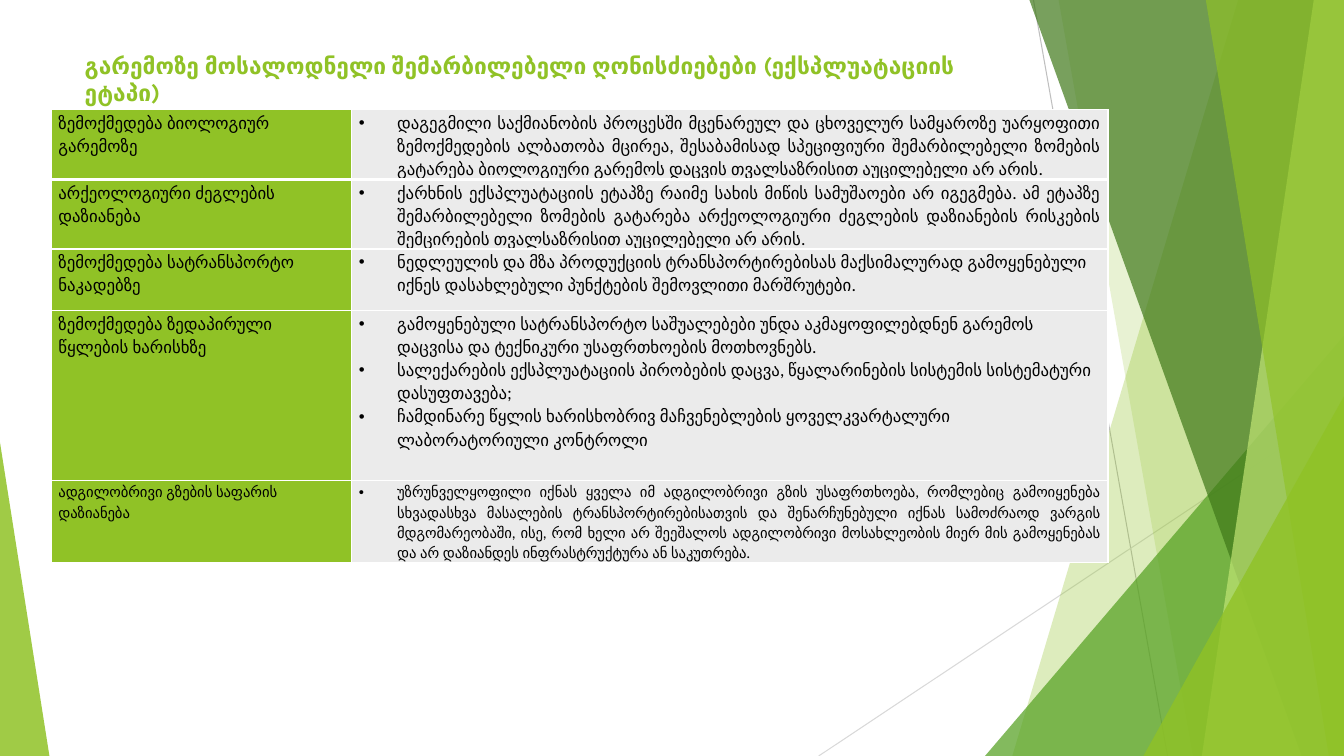
from lxml.etree import SubElement
from pptx import Presentation
from pptx.dml.color import RGBColor
from pptx.enum.shapes import MSO_CONNECTOR, MSO_SHAPE
from pptx.enum.text import MSO_ANCHOR, MSO_AUTO_SIZE, PP_ALIGN
from pptx.oxml.ns import qn
from pptx.util import Inches, Pt

GREEN = RGBColor(0x90, 0xC2, 0x26)
MID_GREEN = RGBColor(0x54, 0xA0, 0x21)
DARK_GREEN = RGBColor(0x3F, 0x78, 0x19)
PALE_GREEN = RGBColor(0xC0, 0xE4, 0x74)
LIGHT_GRAY = RGBColor(0xEB, 0xEB, 0xEB)
LINE_GRAY = RGBColor(0xBF, 0xBF, 0xBF)
SOFT_GRAY = RGBColor(0xD9, 0xD9, 0xD9)
BLACK = RGBColor(0, 0, 0)

TITLE = "გარემოზე მოსალოდნელი შემარბილებელი ღონისძიებები (ექსპლუატაციის ეტაპი)"
JUSTIFY, LEFT = PP_ALIGN.JUSTIFY, PP_ALIGN.LEFT
IMPACTS = [
    (0.69, 12, JUSTIFY, "ზემოქმედება ბიოლოგიურ გარემოზე", [
        "დაგეგმილი საქმიანობის პროცესში მცენარეულ და ცხოველურ სამყაროზე უარყოფითი "
        "ზემოქმედების ალბათობა მცირეა, შესაბამისად სპეციფიური შემარბილებელი ზომების "
        "გატარება ბიოლოგიური გარემოს დაცვის თვალსაზრისით აუცილებელი არ არის."]),
    (0.69, 12, JUSTIFY, "არქეოლოგიური ძეგლების დაზიანება", [
        "ქარხნის ექსპლუატაციის ეტაპზე რაიმე სახის მიწის სამუშაოები არ იგეგმება. ამ ეტაპზე "
        "შემარბილებელი ზომების გატარება არქეოლოგიური ძეგლების დაზიანების რისკების "
        "შემცირების თვალსაზრისით აუცილებელი არ არის."]),
    (0.61, 12, LEFT, "ზემოქმედება სატრანსპორტო ნაკადებზე", [
        "ნედლეულის და მზა პროდუქციის ტრანსპორტირებისას მაქსიმალურად გამოყენებული "
        "იქნეს დასახლებული პუნქტების შემოვლითი მარშრუტები."]),
    (1.69, 12, LEFT, "ზემოქმედება ზედაპირული წყლების ხარისხზე", [
        "გამოყენებული სატრანსპორტო საშუალებები უნდა აკმაყოფილებდნენ გარემოს "
        "დაცვისა და ტექნიკური უსაფრთხოების მოთხოვნებს.",
        "სალექარების ექსპლუატაციის პირობების დაცვა, წყალარინების სისტემის სისტემატური "
        "დასუფთავება;",
        "ჩამდინარე წყლის ხარისხობრივ მაჩვენებლების ყოველკვარტალური "
        "ლაბორატორიული კონტროლი"]),
    (0.81, 10.5, JUSTIFY, "ადგილობრივი გზების საფარის დაზიანება", [
        "უზრუნველყოფილი იქნას ყველა იმ ადგილობრივი გზის უსაფრთხოება, რომლებიც გამოიყენება "
        "სხვადასხვა მასალების ტრანსპორტირებისათვის და შენარჩუნებული იქნას სამოძრაოდ ვარგის "
        "მდგომარეობაში, ისე, რომ ხელი არ შეეშალოს ადგილობრივი მოსახლეობის მიერ მის გამოყენებას "
        "და არ დაზიანდეს ინფრასტრუქტურა ან საკუთრება."]),
]


def paint(shape, color, opacity):
    """Give a shape a translucent fill without outline or shadow."""
    shape.shadow.inherit = False
    shape.line.fill.background()
    shape.fill.solid()
    shape.fill.fore_color.rgb = color
    fill_color = shape.fill._xPr.find(qn("a:solidFill"))[0]
    SubElement(fill_color, qn("a:alpha"), val=str(opacity * 1000))


def add_ray(slide, start, end, color):
    """Draw a thin straight line between two points."""
    ray = slide.shapes.add_connector(
        MSO_CONNECTOR.STRAIGHT, *(Inches(value) for value in (*start, *end)))
    ray.line.color.rgb = color
    ray.line.width = Pt(0.75)
    SubElement(ray._element.spPr, qn("a:effectLst"))


def add_ribbon(slide, box, top_offset, bottom_offset, color, opacity):
    """Draw a slanted ribbon that reaches the right edge of the box."""
    left, top, width, height = box
    right, bottom = left + width, top + height
    builder = slide.shapes.build_freeform(Inches(left + top_offset), Inches(top))
    builder.add_line_segments([
        (Inches(right), Inches(top)),
        (Inches(right), Inches(bottom)),
        (Inches(left + bottom_offset), Inches(bottom)),
    ], close=True)
    paint(builder.convert_to_shape(), color, opacity)


def add_corner(slide, box, apex, color, opacity):
    """Fill the box with a right triangle whose apex is at the given side."""
    triangle = slide.shapes.add_shape(
        MSO_SHAPE.ISOSCELES_TRIANGLE, *(Inches(value) for value in box))
    triangle.adjustments[0] = apex
    paint(triangle, color, opacity)


def add_facets(slide, box):
    """Layer the rays, ribbons and triangles along the right edge of the box."""
    left, top, width, height = box
    right, bottom = left + width, top + height
    add_ray(slide, (left + 2.13, top), (left + 3.46, bottom), LINE_GRAY)
    add_ray(slide, (right, top + 4.03), (left, bottom), SOFT_GRAY)
    add_ribbon(slide, box, 4.16, 1.92, GREEN, 30)
    add_ribbon(slide, box, 2.38, 3.71, GREEN, 20)
    add_corner(slide, (right - 3.56, bottom - 4.17, 3.56, 4.17), 1, MID_GREEN, 72)
    add_ribbon(slide, box, 2.09, 4.79, DARK_GREEN, 70)
    add_ribbon(slide, box, 4.91, 3.8, PALE_GREEN, 70)
    add_ribbon(slide, box, 3.84, 5.06, GREEN, 65)
    add_corner(slide, (right - 1.99, bottom - 3.57, 1.99, 3.57), 1, GREEN, 80)


def fill_title(slide, box):
    """Place and format the slide title."""
    title = slide.shapes.title
    title.left, title.top, title.width, title.height = (Inches(value) for value in box)
    frame = title.text_frame
    frame.text = TITLE
    frame.word_wrap = True
    frame.auto_size = MSO_AUTO_SIZE.NONE
    frame.vertical_anchor = MSO_ANCHOR.TOP
    paragraph = frame.paragraphs[0]
    paragraph.alignment = PP_ALIGN.LEFT
    font = paragraph.font
    font.name, font.size, font.bold = "Karla", Pt(16.2), True
    font.color.rgb = GREEN


def add_bullet(paragraph):
    """Turn a paragraph into a bullet with a hanging indent."""
    properties = paragraph._p.get_or_add_pPr()
    properties.set("marL", str(Inches(0.38)))
    properties.set("indent", str(-Inches(0.38)))
    SubElement(properties, qn("a:buFont"), typeface="Arial")
    SubElement(properties, qn("a:buChar"), char="•")


def add_borders(cell, top_width, bottom_width):
    """Draw white borders around a cell."""
    properties = cell._tc.get_or_add_tcPr()
    widths = {"a:lnL": 1, "a:lnR": 1, "a:lnT": top_width, "a:lnB": bottom_width}
    for index, (tag, width) in enumerate(widths.items()):
        border = SubElement(properties, qn(tag), w=str(Pt(width)))
        SubElement(SubElement(border, qn("a:solidFill")), qn("a:srgbClr"), val="FFFFFF")
        properties.insert(index, border)


def fill_cell(cell, lines, size, alignment, color, bulleted):
    """Write the paragraphs of one table cell."""
    cell.margin_left = cell.margin_right = Inches(0.07)
    cell.margin_top = cell.margin_bottom = 0
    cell.fill.solid()
    cell.fill.fore_color.rgb = color
    cell.text_frame.text = "\n".join(lines)
    for paragraph in cell.text_frame.paragraphs:
        paragraph.alignment = alignment
        paragraph.line_spacing = 1.15
        paragraph.font.name, paragraph.font.size = "Lato", Pt(size)
        paragraph.font.color.rgb = BLACK
        if bulleted:
            add_bullet(paragraph)


def add_impact_table(slide, box):
    """Build the table of impacts and mitigation measures."""
    frame = slide.shapes.add_table(
        len(IMPACTS), 2, *(Inches(value) for value in box))
    table = frame.table
    table.first_row = table.horz_banding = False
    table.columns[0].width = Inches(2.98)
    table.columns[1].width = Inches(box[2] - 2.98)
    for index, (height, size, alignment, impact, measures) in enumerate(IMPACTS):
        table.rows[index].height = Inches(height)
        impact_cell, measures_cell = table.cell(index, 0), table.cell(index, 1)
        fill_cell(impact_cell, [impact], size, LEFT, GREEN, False)
        fill_cell(measures_cell, measures, size, alignment, LIGHT_GRAY, True)
        for cell in (impact_cell, measures_cell):
            add_borders(cell, 3 if index == 1 else 1, 3 if index == 0 else 1)


def main():
    """Build and save the presentation."""
    presentation = Presentation()
    presentation.slide_width, presentation.slide_height = Inches(13.33), Inches(7.5)
    slide = presentation.slides.add_slide(presentation.slide_layouts[5])
    add_facets(slide, (8.12, 0, 5.21, 7.5))
    add_corner(slide, (0, 4.39, 0.49, 3.11), 0, GREEN, 85)
    fill_title(slide, (0.74, 0.46, 9.4, 0.55))
    add_impact_table(slide, (0.51, 1.09, 10.48, 4.49))
    presentation.save("out.pptx")


if __name__ == "__main__":
    main()
